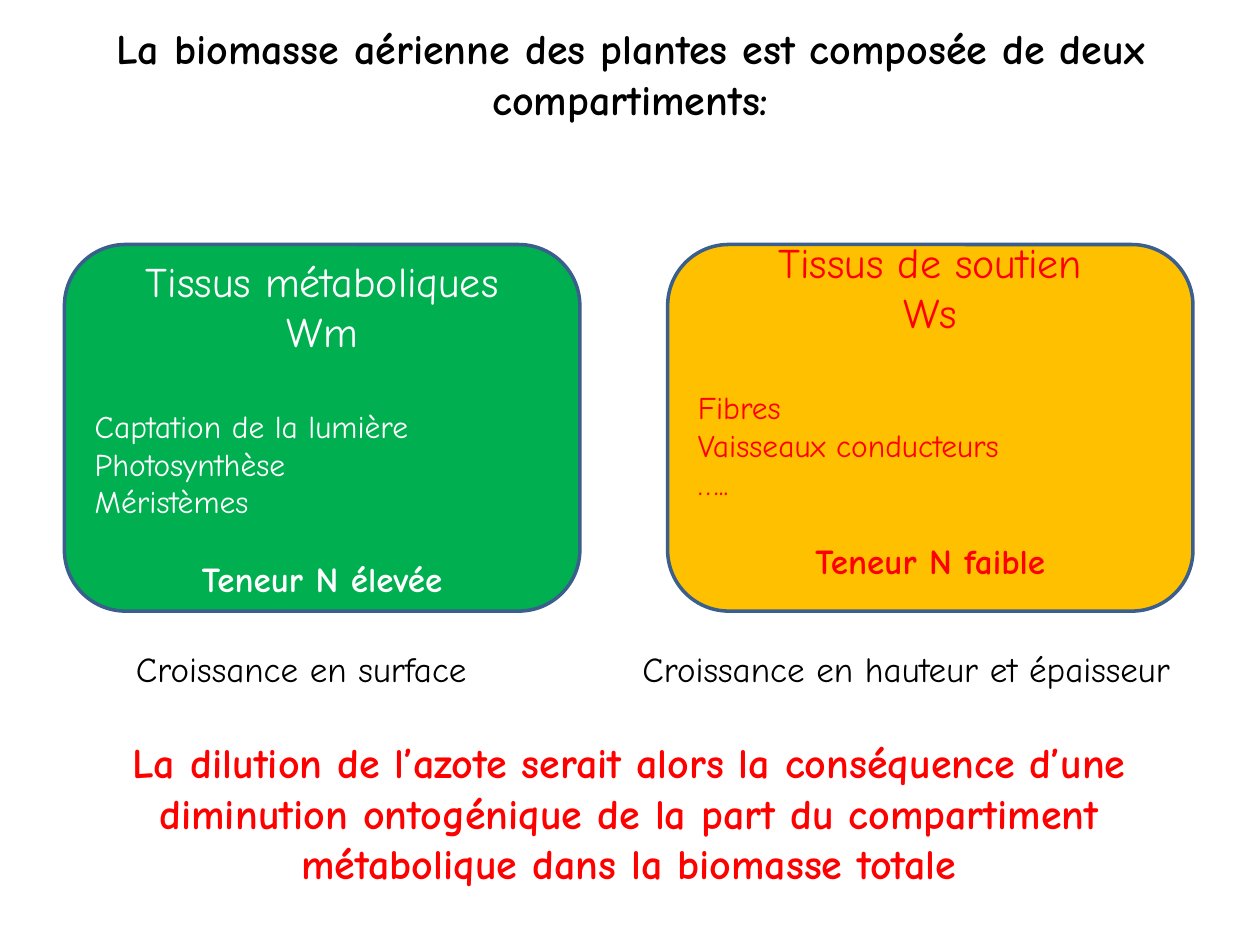
from dataclasses import dataclass

import pptx
import pptx.dml.color
import pptx.enum.shapes
import pptx.enum.text
import pptx.util

Cm = pptx.util.Cm
Pt = pptx.util.Pt
RGBColor = pptx.dml.color.RGBColor
Align = pptx.enum.text.PP_ALIGN
Anchor = pptx.enum.text.MSO_ANCHOR


@dataclass(frozen=True)
class Theme:
    font: str = "Comic Neue"
    black: str = "000000"
    white: str = "FFFFFF"
    red: str = "FF0000"
    green: str = "00B050"
    amber: str = "FFC000"
    outline: str = "3A5F8C"
    heading_size: float = 24
    label_size: float = 20
    item_size: float = 18


@dataclass(frozen=True)
class Box:
    """Position and size in centimetres."""
    left: float
    top: float
    width: float
    height: float

    def lengths(self) -> tuple:
        return Cm(self.left), Cm(self.top), Cm(self.width), Cm(self.height)


@dataclass(frozen=True)
class Compartment:
    box: Box
    fill: str
    color: str
    heading: tuple[str, ...]
    items: tuple[str, ...]
    content: str
    bottom_inset: float


@dataclass(frozen=True)
class Label:
    box: Box
    text: str
    size: float
    color: str
    bold: bool = False
    align: Align = Align.LEFT
    wrap: bool = False


THEME = Theme()
COMPARTMENT_TOP, COMPARTMENT_HEIGHT = 4.93, 7.39
GROWTH_TOP, GROWTH_HEIGHT = 12.93, 1.11
HEADING_GAP, ITEM_GAP = 28.9, 21.6  # points, one line of text each

TITLE = Label(Box(0.3, 0.33, 24.82, 2.31),
              "La biomasse aérienne des plantes est composée de deux compartiments:",
              THEME.heading_size, THEME.black, True, Align.CENTER, True)

COMPARTMENTS = (
    Compartment(Box(1.3, COMPARTMENT_TOP, 10.39, COMPARTMENT_HEIGHT),
                THEME.green, THEME.white,
                ("Tissus métaboliques", "Wm"),
                ("Captation de la lumière", "Photosynthèse", "Méristèmes"),
                "Teneur N élevée", 0.13),
    Compartment(Box(13.46, COMPARTMENT_TOP, 10.59, COMPARTMENT_HEIGHT),
                THEME.amber, THEME.red,
                ("Tissus de soutien", "Ws"),
                ("Fibres", "Vaisseaux conducteurs", "….."),
                "Teneur N faible", 0.89),
)

LABELS = (
    Label(Box(2.49, GROWTH_TOP, 7.77, GROWTH_HEIGHT),
          "Croissance en surface", THEME.label_size, THEME.black),
    Label(Box(12.7, GROWTH_TOP, 12.12, GROWTH_HEIGHT),
          "Croissance en hauteur et épaisseur", THEME.label_size, THEME.black),
    Label(Box(1.3, 14.73, 22.76, 3.33),
          "La dilution de l’azote serait alors la conséquence d’une diminution "
          "ontogénique de la part du compartiment métabolique dans la biomasse totale",
          THEME.heading_size, THEME.red, True, Align.CENTER, True),
)


def format_paragraph(paragraph, size: float, color: str, bold: bool, align: Align) -> None:
    paragraph.alignment = align
    for run in paragraph.runs:
        run.font.name = THEME.font
        run.font.size = Pt(size)
        run.font.bold = bold
        run.font.color.rgb = RGBColor.from_string(color)


def write_label(shape, label: Label) -> None:
    text_frame = shape.text_frame
    text_frame.text = label.text
    text_frame.word_wrap = label.wrap
    text_frame.auto_size = pptx.enum.text.MSO_AUTO_SIZE.NONE
    text_frame.vertical_anchor = Anchor.TOP
    format_paragraph(text_frame.paragraphs[0], label.size, label.color,
                     label.bold, label.align)


def draw_title(slide, label: Label) -> None:
    title = slide.shapes.title
    title.left, title.top, title.width, title.height = label.box.lengths()
    write_label(title, label)


def draw_label(slide, label: Label) -> None:
    write_label(slide.shapes.add_textbox(*label.box.lengths()), label)


def draw_compartment(slide, compartment: Compartment) -> None:
    shape = slide.shapes.add_shape(
        pptx.enum.shapes.MSO_SHAPE.ROUNDED_RECTANGLE, *compartment.box.lengths())
    shape.shadow.inherit = False
    shape.fill.solid()
    shape.fill.fore_color.rgb = RGBColor.from_string(compartment.fill)
    shape.line.color.rgb = RGBColor.from_string(THEME.outline)
    shape.line.width = Pt(2)

    text_frame = shape.text_frame
    text_frame.word_wrap = True
    text_frame.vertical_anchor = Anchor.MIDDLE
    text_frame.margin_bottom = Cm(compartment.bottom_inset)
    text_frame.text = "\n".join(
        (*compartment.heading, *compartment.items, compartment.content))

    # Heading, list of items, then nitrogen content
    first_item = len(compartment.heading)
    last = first_item + len(compartment.items)
    paragraphs = text_frame.paragraphs
    for paragraph in paragraphs[:first_item]:
        format_paragraph(paragraph, THEME.heading_size, compartment.color, False, Align.CENTER)
    for paragraph in paragraphs[first_item:last]:
        format_paragraph(paragraph, THEME.item_size, compartment.color, False, Align.LEFT)
    format_paragraph(paragraphs[last], THEME.label_size, compartment.color, True, Align.CENTER)
    paragraphs[first_item].space_before = Pt(HEADING_GAP)
    paragraphs[last].space_before = Pt(ITEM_GAP)


def main() -> None:
    presentation = pptx.Presentation()
    presentation.slide_width = Cm(25.4)
    presentation.slide_height = Cm(19.05)
    slide = presentation.slides.add_slide(presentation.slide_layouts[5])

    draw_title(slide, TITLE)
    for compartment in COMPARTMENTS:
        draw_compartment(slide, compartment)
    # Growth captions and conclusion
    for label in LABELS:
        draw_label(slide, label)

    presentation.save("out.pptx")


if __name__ == "__main__":
    main()
